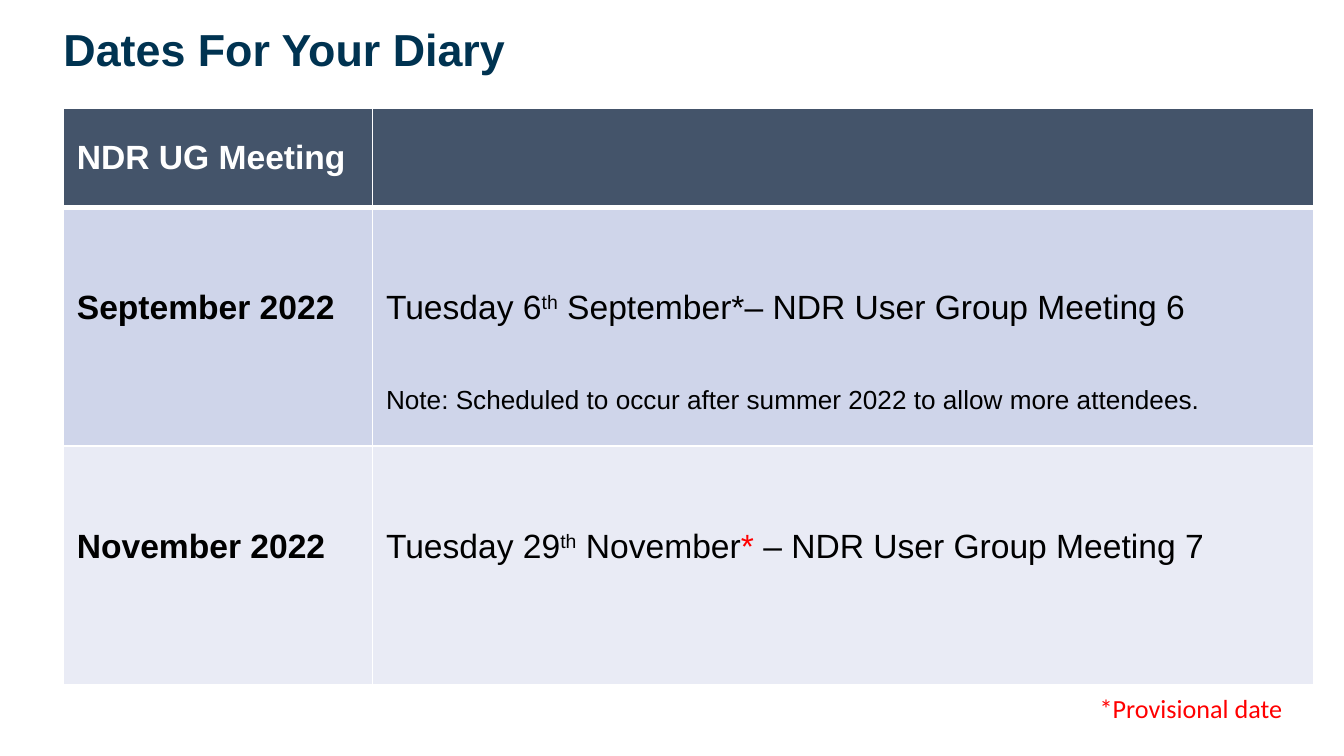
from dataclasses import dataclass

from lxml import etree
from pptx import Presentation
from pptx.dml.color import RGBColor
from pptx.enum.text import MSO_ANCHOR
from pptx.oxml.ns import qn
from pptx.util import Pt

MIDDLE, TOP = MSO_ANCHOR.MIDDLE, MSO_ANCHOR.TOP
WHITE, BLACK, RED, NAVY = "FFFFFF", "000000", "FF0000", "003351"
HEADER_FILL, SEPTEMBER_FILL, NOVEMBER_FILL = "44546A", "CFD5EA", "E9EBF5"


@dataclass(frozen=True)
class Span:
    text: str
    size: float = 18
    color: str = BLACK
    bold: bool = False
    superscript: bool = False
    font: str = "Arial"


@dataclass(frozen=True)
class Row:
    height: float
    fill: str
    cells: list[list[list[Span]]]
    anchor: MSO_ANCHOR = TOP
    line_spacing: float = 3.0
    bottom_border: float = 1


ROWS = [
    Row(53.3, HEADER_FILL,
        [[[Span("NDR UG Meeting", color=WHITE, bold=True)]], []],
        anchor=MIDDLE, line_spacing=1.0, bottom_border=3),
    Row(128, SEPTEMBER_FILL, [
        [[Span("September 2022", bold=True)]],
        [[Span("Tuesday 6"), Span("th", superscript=True),
          Span(" September*– NDR User Group Meeting 6")],
         [Span("Note: Scheduled to occur after summer 2022 to allow more attendees.", size=14)]],
    ]),
    Row(128, NOVEMBER_FILL, [
        [[Span("November 2022", bold=True)]],
        [[Span("Tuesday 29"), Span("th", superscript=True), Span(" November"),
          Span("*", color=RED), Span(" – NDR User Group Meeting 7")]],
    ]),
]
COLUMN_WIDTHS = [165.6, 504]


def rgb(color: str) -> RGBColor:
    return RGBColor.from_string(color)


def write(tf, paragraphs: list[list[Span]], line_spacing: float = 1.0) -> None:
    for i, spans in enumerate(paragraphs):
        p = tf.add_paragraph() if i else tf.paragraphs[0]
        p.line_spacing = line_spacing
        for span in spans:
            r = p.add_run()
            r.text = span.text
            r.font.size = Pt(span.size)
            r.font.name = span.font
            r.font.bold = span.bold
            r.font.color.rgb = rgb(span.color)
            if span.superscript:
                r._r.get_or_add_rPr().set("baseline", "30000")


def add_borders(cell, bottom: float, top: float) -> None:
    tc_pr = cell._tc.get_or_add_tcPr()
    for side, width in (("L", 1), ("R", 1), ("T", top), ("B", bottom)):
        ln = etree.SubElement(tc_pr, qn(f"a:ln{side}"), w=str(Pt(width)))
        fill = etree.SubElement(ln, qn("a:solidFill"))
        etree.SubElement(fill, qn("a:srgbClr"), val=WHITE)


def add_dates_table(slide, left: float, top: float) -> None:
    table = slide.shapes.add_table(
        len(ROWS), len(COLUMN_WIDTHS), Pt(left), Pt(top),
        Pt(sum(COLUMN_WIDTHS)), Pt(sum(row.height for row in ROWS))).table
    for column, width in zip(table.columns, COLUMN_WIDTHS):
        column.width = Pt(width)
    top_border = 1
    for i, row in enumerate(ROWS):
        table.rows[i].height = Pt(row.height)
        for j, paragraphs in enumerate(row.cells):
            cell = table.cell(i, j)
            cell.vertical_anchor = row.anchor
            add_borders(cell, row.bottom_border, top_border)
            cell.fill.solid()
            cell.fill.fore_color.rgb = rgb(row.fill)
            write(cell.text_frame, paragraphs, row.line_spacing)
        top_border = row.bottom_border


def add_text(slide, left: float, top: float, width: float, height: float, span: Span):
    tf = slide.shapes.add_textbox(Pt(left), Pt(top), Pt(width), Pt(height)).text_frame
    tf.word_wrap = True
    write(tf, [[span]])
    return tf


def main() -> None:
    prs = Presentation()
    prs.slide_width, prs.slide_height = Pt(720), Pt(405)
    slide = prs.slides.add_slide(prs.slide_layouts[6])

    title = add_text(slide, 34, 15, 419, 29.5,
                     Span("Dates For Your Diary", size=24, color=NAVY, bold=True))
    title.margin_left = title.margin_top = 0
    title.vertical_anchor = MIDDLE
    title.paragraphs[0].line_spacing = 0.9

    add_dates_table(slide, 34, 57.8)
    add_text(slide, 582, 367.2, 124, 24.2,
             Span("*Provisional date", size=14, color=RED, font="Calibri"))
    prs.save("out.pptx")


if __name__ == "__main__":
    main()
